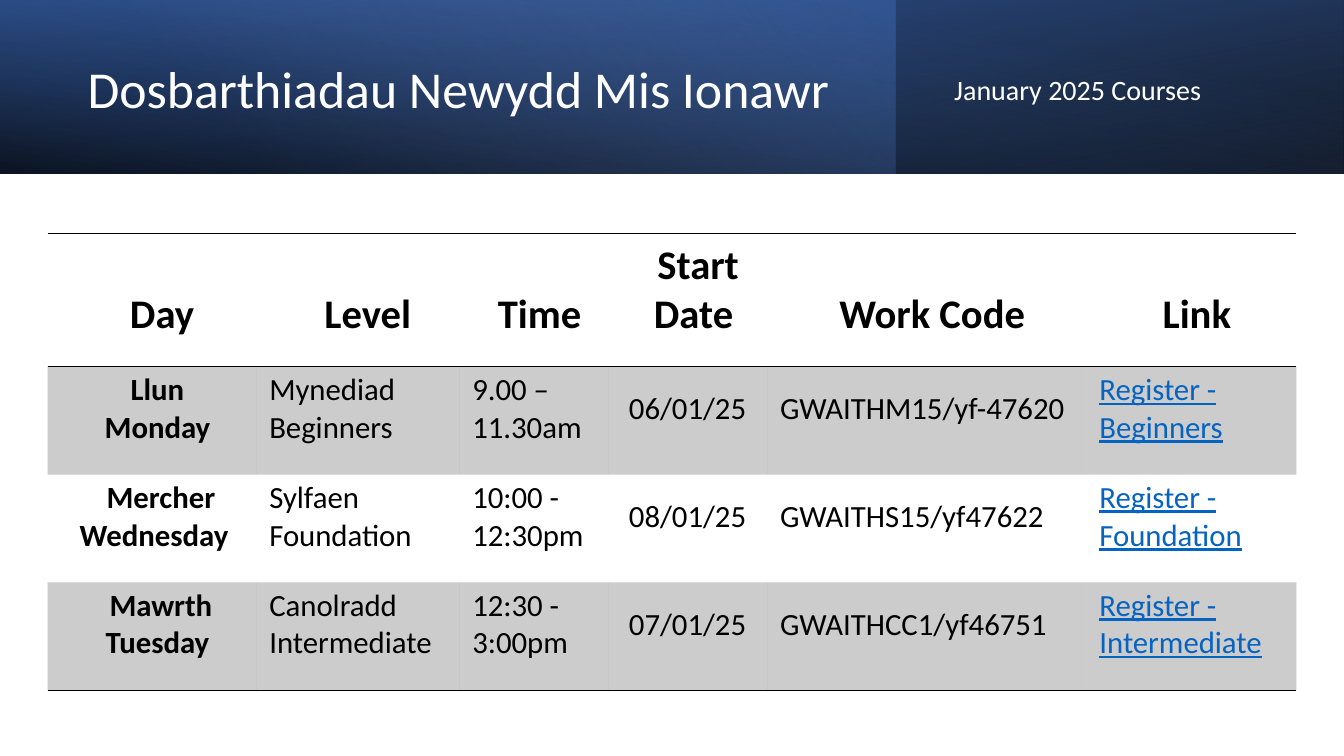
from lxml import etree
from pptx import Presentation
from pptx.dml.color import RGBColor
from pptx.enum import shapes, text
from pptx.oxml import ns
from pptx.util import Pt

BLACK = RGBColor(0x00, 0x00, 0x00)
WHITE = RGBColor(0xFF, 0xFF, 0xFF)
NAVY = RGBColor(0x2F, 0x55, 0x97)
BLUE = RGBColor(0x44, 0x72, 0xC4)
PALE_BLUE = RGBColor(0x8F, 0xAA, 0xDC)
LINK_BLUE = RGBColor(0x05, 0x63, 0xC1)

FONT = "Calibri"
PLAIN_TABLE = "{2D5ABB26-0587-4C30-8999-92F81FD0307C}"
COLUMN_WIDTHS = [149, 145, 107, 113, 228, 150]
HEADINGS = [" Day", " Level", "Time", " Start Date", "Work Code", "Link"]
COURSES = [
    ["Llun\nMonday", "Mynediad\nBeginners", "9.00 –\n11.30am",
     " 06/01/25", "GWAITHM15/yf-47620", "Register - Beginners"],
    [" Mercher\nWednesday ", "Sylfaen\nFoundation", "10:00 - 12:30pm",
     " 08/01/25", "GWAITHS15/yf47622", "Register - Foundation"],
    [" Mawrth\nTuesday", "Canolradd\nIntermediate", "12:30 - 3:00pm",
     " 07/01/25", "GWAITHCC1/yf46751", "Register - Intermediate"],
]


def add_child(parent, tag, **attributes):
    child = etree.SubElement(parent, ns.qn(tag))
    for key, value in attributes.items():
        child.set(key, str(value))
    return child


def add_color(parent, color, opacity=100):
    srgb = add_child(parent, "a:srgbClr", val=color)
    if opacity < 100:
        add_child(srgb, "a:alpha", val=opacity * 1000)


def write(frame, content, *, size, color=BLACK, bold=False, underline=False,
          align=text.PP_ALIGN.LEFT, line_spacing=None):
    for index, line in enumerate(content.split("\n")):
        paragraph = frame.add_paragraph() if index else frame.paragraphs[0]
        paragraph.alignment = align
        paragraph.line_spacing = line_spacing
        run = paragraph.add_run()
        run.text = line
        font = run.font
        font.name, font.size, font.bold = FONT, Pt(size), bold
        font.underline = underline
        font.color.rgb = color


def add_band(slide, width, stops, angle, flipped=False, rotation=0):
    band = slide.shapes.add_shape(
        shapes.MSO_SHAPE.RECTANGLE, 0, 0, Pt(width), Pt(124))
    band.shadow.inherit = False
    band.line.fill.background()
    band.rotation = rotation
    properties = band._element.spPr
    if flipped:
        properties.find(ns.qn("a:xfrm")).set("flipH", "1")
    gradient = etree.Element(ns.qn("a:gradFill"), rotWithShape="1")
    stop_list = add_child(gradient, "a:gsLst")
    for position, color, opacity in stops:
        stop = add_child(stop_list, "a:gs", pos=position * 1000)
        add_color(stop, color, opacity)
    add_child(gradient, "a:lin", ang=angle * 60000, scaled=0)
    properties.find(ns.qn("a:prstGeom")).addnext(gradient)


def add_label(slide, content, left, top, width, height, size):
    frame = slide.shapes.add_textbox(
        Pt(left), Pt(top), Pt(width), Pt(height)).text_frame
    frame.word_wrap = True
    frame.vertical_anchor = text.MSO_ANCHOR.MIDDLE
    write(frame, content, size=size, color=WHITE, line_spacing=0.9)


def add_border(cell, side):
    border = add_child(cell._tc.get_or_add_tcPr(), side, w=Pt(1))
    add_color(add_child(border, "a:solidFill"), BLACK)


def style_cell(cell, anchor, shaded, borders):
    cell.margin_left, cell.margin_top = Pt(9.4), Pt(2.9)
    cell.margin_right, cell.margin_bottom = Pt(1.4), Pt(19.4)
    cell.vertical_anchor = anchor
    for side in borders:
        add_border(cell, side)
    if shaded:
        shade = add_child(cell._tc.get_or_add_tcPr(), "a:solidFill")
        add_color(shade, BLACK, 20)
    else:
        cell.fill.background()


def add_timetable(slide):
    timetable = slide.shapes.add_table(
        len(COURSES) + 1, len(HEADINGS), Pt(34), Pt(167),
        Pt(sum(COLUMN_WIDTHS)), Pt(326)).table
    timetable._tbl.tblPr.find(ns.qn("a:tableStyleId")).text = PLAIN_TABLE
    timetable.horz_banding = False
    for column, width in zip(timetable.columns, COLUMN_WIDTHS):
        column.width = Pt(width)
    for row_index, row in enumerate([HEADINGS] + COURSES):
        heading = row_index == 0
        timetable.rows[row_index].height = Pt(95 if heading else 77)
        if heading:
            borders = ["a:lnT", "a:lnB"]
        else:
            borders = ["a:lnB"] if row_index == len(COURSES) else []
        anchor = text.MSO_ANCHOR.BOTTOM if heading else text.MSO_ANCHOR.MIDDLE
        for column_index, content in enumerate(row):
            cell = timetable.cell(row_index, column_index)
            style_cell(cell, anchor, row_index % 2 == 1, borders)
            strong = heading or column_index == 0
            link = not heading and column_index == len(HEADINGS) - 1
            write(cell.text_frame, content, size=29 if heading else 22,
                  color=LINK_BLUE if link else BLACK,
                  bold=strong, underline=link,
                  align=text.PP_ALIGN.CENTER if strong else text.PP_ALIGN.LEFT)


def main():
    deck = Presentation()
    deck.slide_width, deck.slide_height = Pt(960), Pt(540)
    slide = deck.slides.add_slide(deck.slide_layouts[6])
    add_band(slide, 960, [(0, BLACK, 96), (100, NAVY, 100)], 100,
             flipped=True, rotation=180)
    add_band(slide, 640, [(0, BLUE, 41), (74, PALE_BLUE, 0)], 140)
    add_band(slide, 960, [(0, BLACK, 63), (78, BLUE, 15)], 260, flipped=True)
    add_label(slide, "Dosbarthiadau Newydd Mis Ionawr", 55.5, 19.5, 556, 91.5, 37)
    add_label(slide, "January 2025 Courses", 674.5, 31, 255, 69, 20)
    add_timetable(slide)
    deck.save("out.pptx")


if __name__ == "__main__":
    main()
